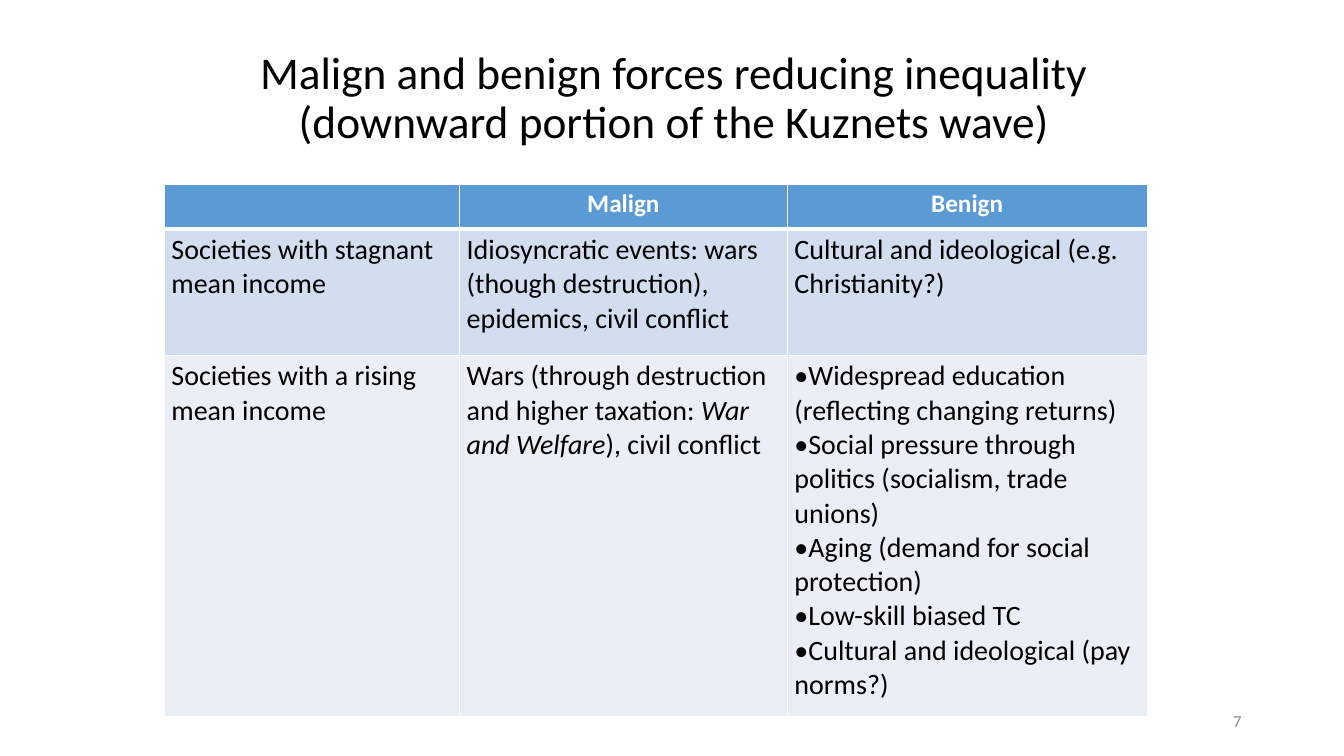
from pptx import Presentation
from pptx.dml.color import RGBColor
from pptx.enum.text import MSO_ANCHOR, PP_ALIGN
from pptx.oxml import parse_xml
from pptx.oxml.ns import nsdecls
from pptx.util import Cm, Pt

BLACK = RGBColor(0x00, 0x00, 0x00)
WHITE = RGBColor(0xFF, 0xFF, 0xFF)
GREY = RGBColor(0x8C, 0x8C, 0x8C)
ROW_FILLS = [RGBColor(0x5B, 0x9B, 0xD5), RGBColor(0xD2, 0xDE, 0xEF), RGBColor(0xEA, 0xEF, 0xF7)]


def add_run(paragraph, text, size, color, bold=False, italic=False):
    run = paragraph.add_run()
    run.text = text
    run.font.name = "Calibri"
    run.font.size = Pt(size)
    run.font.color.rgb = color
    run.font.bold = bold
    run.font.italic = italic


def add_border(cell, side, width):
    cell._tc.get_or_add_tcPr().append(parse_xml(
        f'<a:ln{side} {nsdecls("a")} w="{Pt(width)}"><a:solidFill>'
        f'<a:srgbClr val="{WHITE}"/></a:solidFill></a:ln{side}>'))


presentation = Presentation()
presentation.slide_width = Cm(33.87)
presentation.slide_height = Cm(19.05)
slide = presentation.slides.add_slide(presentation.slide_layouts[6])

# Title and slide number
text_boxes = [
    ("Malign and benign forces reducing inequality (downward portion of the Kuznets wave)",
     (5.08, 0.64, 23.8, 3.71), 32.4, BLACK, PP_ALIGN.CENTER, 0.9),
    ("7", (23.92, 17.66, 7.62, 1.01), 12, GREY, PP_ALIGN.RIGHT, 1.0),
]
for text, position, size, color, alignment, spacing in text_boxes:
    frame = slide.shapes.add_textbox(*map(Cm, position)).text_frame
    frame.word_wrap = True
    frame.vertical_anchor = MSO_ANCHOR.MIDDLE
    paragraph = frame.paragraphs[0]
    paragraph.alignment = alignment
    paragraph.line_spacing = spacing
    add_run(paragraph, text, size, color)

# Table content: each cell is a list of paragraphs, each paragraph a list of (text, italic)
rows = [
    [[], [[("Malign", False)]], [[("Benign", False)]]],
    [
        [[("Societies with stagnant mean income", False)]],
        [[("Idiosyncratic events: wars (though destruction), epidemics, civil conflict", False)]],
        [[("Cultural and ideological (e.g. Christianity?)", False)]],
    ],
    [
        [[("Societies with a rising mean income", False)]],
        [[("Wars (through destruction and higher taxation: ", False),
          ("War and Welfare", True),
          ("), civil conflict", False)]],
        [[(force, False)] for force in (
            "•Widespread education (reflecting changing returns)",
            "•Social pressure through politics (socialism, trade unions)",
            "•Aging (demand for social protection)",
            "•Low-skill biased TC",
            "•Cultural and ideological (pay norms?)",
        )],
    ],
]
column_widths = [7.44, 8.26, 9.07]
row_heights = [1.12, 3.18, 9.12]

# Table
table = slide.shapes.add_table(
    len(rows), len(column_widths), Cm(4.14), Cm(4.65),
    Cm(sum(column_widths)), Cm(sum(row_heights))).table
for column, width in zip(table.columns, column_widths):
    column.width = Cm(width)
for row, height in zip(table.rows, row_heights):
    row.height = Cm(height)

for row_index, row in enumerate(rows):
    is_header = row_index == 0
    for column_index, paragraphs in enumerate(row):
        cell = table.cell(row_index, column_index)
        cell.margin_left = cell.margin_right = Cm(0.18)
        cell.margin_top = cell.margin_bottom = Cm(0.1)

        # White grid, heavier under the header
        for side in "LRTB":
            heavy = (is_header and side == "B") or (row_index == 1 and side == "T")
            add_border(cell, side, 3 if heavy else 1)
        cell.fill.solid()
        cell.fill.fore_color.rgb = ROW_FILLS[row_index]

        frame = cell.text_frame
        for index, runs in enumerate(paragraphs):
            paragraph = frame.add_paragraph() if index else frame.paragraphs[0]
            paragraph.alignment = PP_ALIGN.CENTER if is_header else PP_ALIGN.LEFT
            for text, italic in runs:
                add_run(paragraph, text, 18 if is_header else 20,
                        WHITE if is_header else BLACK, is_header, italic)

presentation.save("out.pptx")
